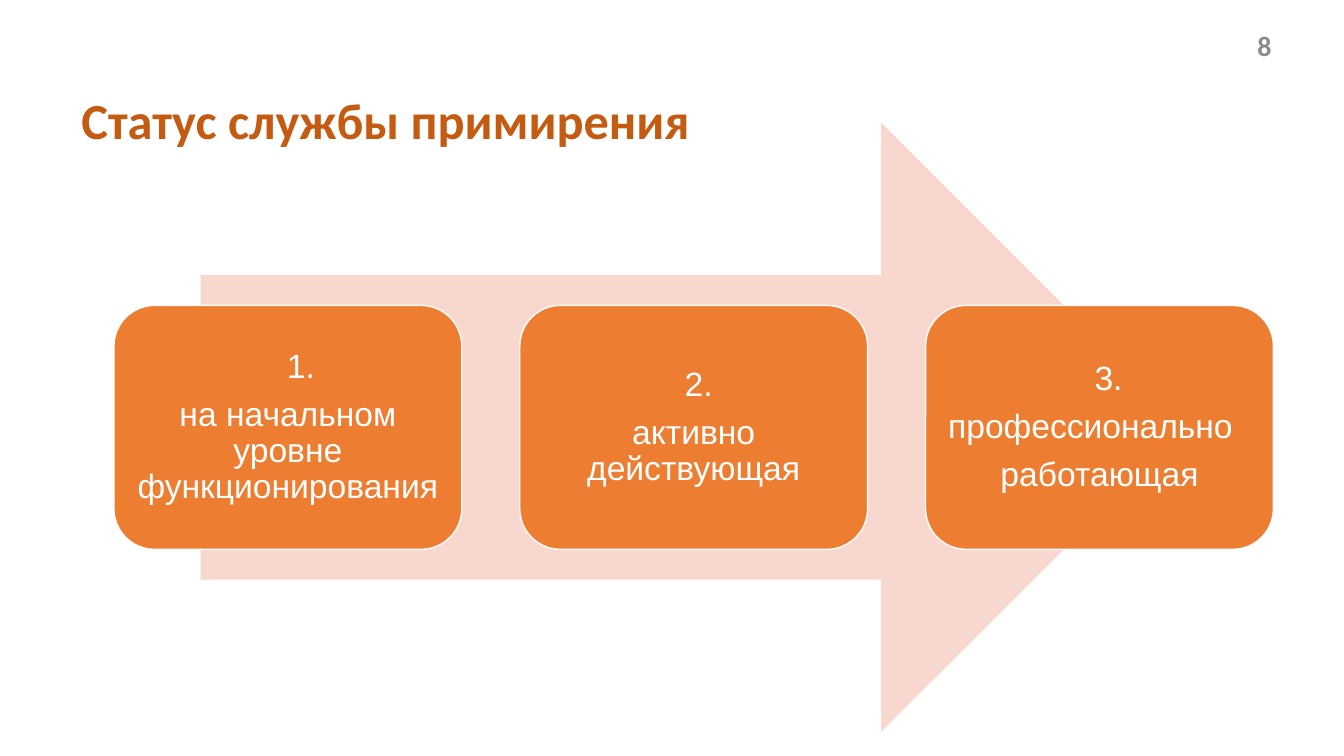
"""Builds the slide on the status of the reconciliation service."""
from pptx import Presentation, util as u
from pptx.dml.color import RGBColor
from pptx.enum import shapes, text

TITLE = "Статус службы примирения"
PAGE = "8"
STAGES = [
    [("1.", 0.26, 0), ("на начальном уровне функционирования", 0, 0)],
    [("2.", 0.1, 0), ("активно действующая", 0, 0)],
    [("3.", 0.18, 0), ("профессионально", 0, 0.18), ("работающая", 0, 0)],
]
ARROW = (1.99, 1.22, 9.77, 6.04)
STAGE_LEFT, STAGE_TOP, STAGE_WIDTH, STAGE_HEIGHT = 1.13, 3.03, 3.45, 2.42
STAGE_STEP = STAGE_WIDTH * 7 / 6
ALIGN = text.PP_ALIGN


def color(value):
    return RGBColor.from_string(value)


def add_line(paragraph, words, size, font, shade, align, bold=False):
    paragraph.alignment = align
    run = paragraph.add_run()
    run.text = words
    run.font.size = u.Pt(size)
    run.font.name = font
    run.font.bold = bold
    run.font.color.rgb = color(shade)


def add_label(slide, box, words, size, shade, align, spacing):
    frame = slide.shapes.add_textbox(*map(u.Inches, box)).text_frame
    frame.word_wrap = True
    frame.vertical_anchor = text.MSO_ANCHOR.MIDDLE
    frame.paragraphs[0].line_spacing = spacing
    add_line(frame.paragraphs[0], words, size, "Calibri", shade, align, True)


def add_block(slide, preset, box, fill):
    block = slide.shapes.add_shape(preset, *map(u.Inches, box))
    block.shadow.inherit = False
    block.fill.solid()
    block.fill.fore_color.rgb = color(fill)
    block.line.fill.background()
    return block


def add_stage(slide, left, lines):
    box = (left, STAGE_TOP, STAGE_WIDTH, STAGE_HEIGHT)
    stage = add_block(slide, shapes.MSO_SHAPE.ROUNDED_RECTANGLE, box, "ED7D31")
    stage.line.color.rgb = color("FFFFFF")
    stage.line.width = u.Pt(1)
    frame = stage.text_frame
    frame.word_wrap = True
    frame.vertical_anchor = text.MSO_ANCHOR.MIDDLE
    frame.margin_left = frame.margin_right = u.Inches(0.05)
    for index, (words, indent_left, indent_right) in enumerate(lines):
        paragraph = frame.add_paragraph() if index else frame.paragraphs[0]
        add_line(paragraph, words, 24, "Arial", "FFFFFF", ALIGN.CENTER)
        paragraph.line_spacing = 0.9
        paragraph.space_after = u.Pt(8.4)
        properties = paragraph._p.get_or_add_pPr()
        properties.set("marL", str(u.Inches(indent_left)))
        properties.set("marR", str(u.Inches(indent_right)))


def main():
    deck = Presentation()
    deck.slide_width, deck.slide_height = u.Inches(13.33), u.Inches(7.5)
    slide = deck.slides.add_slide(deck.slide_layouts[6])
    add_label(slide, (0.71, 0.69, 8.53, 1.06), TITLE, 36, "C55A11", ALIGN.LEFT, 0.9)
    add_block(slide, shapes.MSO_SHAPE.RIGHT_ARROW, ARROW, "F8D7CE")
    for index, lines in enumerate(STAGES):
        add_stage(slide, STAGE_LEFT + index * STAGE_STEP, lines)
    add_label(slide, (9.71, 0.25, 3, 0.4), PAGE, 20, "8C8C8C", ALIGN.RIGHT, 1.0)
    deck.save("out.pptx")


if __name__ == "__main__":
    main()
